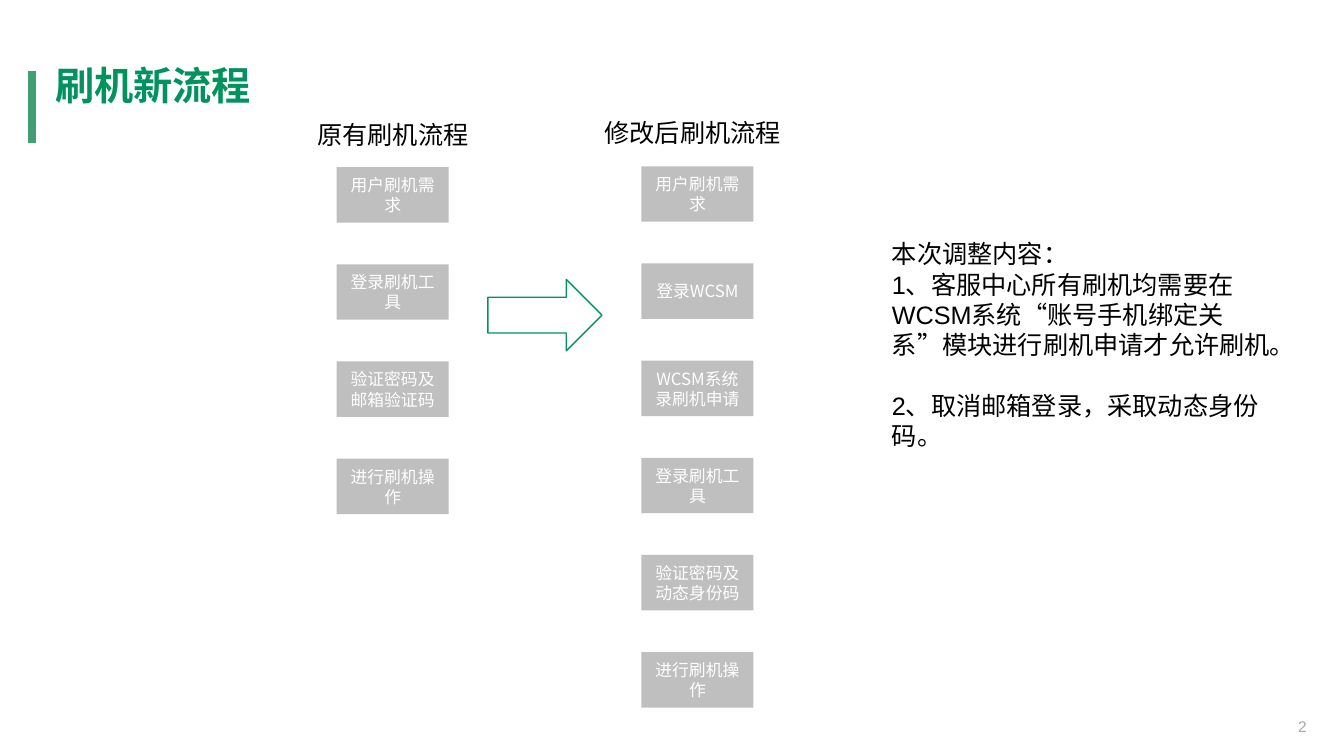
import pptx
import pptx.util
import pptx.dml.color
import pptx.enum.shapes
import pptx.enum.text
import pptx.oxml
import pptx.oxml.ns
from dataclasses import dataclass

Pt = pptx.util.Pt
Align = pptx.enum.text.PP_ALIGN
Anchor = pptx.enum.text.MSO_ANCHOR

TITLE = "刷机新流程"
PAGE_NUMBER = "2"
# Heading, heading box (left, top, width, height), first step (left, top), steps
FLOWS = [
    ("原有刷机流程", (219.6, 81.4, 124.6, 29), (240.5, 119.4),
     ["用户刷机需求", "登录刷机工具", "验证密码及邮箱验证码", "进行刷机操作"]),
    ("修改后刷机流程", (424.8, 80.6, 146.2, 29), (458.2, 118.8),
     ["用户刷机需求", "登录WCSM", "WCSM系统录刷机申请", "登录刷机工具",
      "验证密码及动态身份码", "进行刷机操作"]),
]
CHANGES = [
    "本次调整内容：",
    "1、客服中心所有刷机均需要在WCSM系统“账号手机绑定关系”模块进行刷机申请才允许刷机。",
    "2、取消邮箱登录，采取动态身份码。",
]

STEP_WIDTH, STEP_HEIGHT, STEP_PITCH = 80, 39.6, 69.4
CHANGE_GAP = 21.6


@dataclass(frozen=True)
class Theme:
    green: str = "00925F"
    bar: str = "409F73"
    step: str = "BFBFBF"
    black: str = "000000"
    white: str = "FFFFFF"
    grey: str = "A6A6A6"
    latin: str = "Arial"
    chinese: str = "Noto Sans CJK SC"
    title_size: int = 28
    body_size: int = 18
    step_size: int = 12
    number_size: int = 11


THEME = Theme()


def rgb(value):
    return pptx.dml.color.RGBColor.from_string(value)


def points(*values):
    return [Pt(value) for value in values]


def format_paragraph(paragraph, size, color, latin=THEME.latin, bold=False, align=Align.LEFT):
    paragraph.alignment = align
    font = paragraph.font
    font.size, font.bold, font.name = Pt(size), bold, latin
    font.color.rgb = rgb(color)
    properties = paragraph._p.pPr.find(pptx.oxml.ns.qn("a:defRPr"))
    east_asian = pptx.oxml.parse_xml(
        f'<a:ea {pptx.oxml.ns.nsdecls("a")} typeface="{THEME.chinese}"/>')
    properties.find(pptx.oxml.ns.qn("a:latin")).addnext(east_asian)


def add_text(slide, box, lines, size, color, align=Align.LEFT):
    frame = slide.shapes.add_textbox(*points(*box)).text_frame
    frame.word_wrap = True
    frame.text = "\n".join(lines)
    for paragraph in frame.paragraphs:
        format_paragraph(paragraph, size, color, align=align)
    return frame


def add_title(slide):
    title = slide.shapes.title
    title.left, title.top, title.width, title.height = points(32.4, 40.3, 156.2, 41)
    frame = title.text_frame
    frame.text = TITLE
    frame.word_wrap = False
    frame.auto_size = pptx.enum.text.MSO_AUTO_SIZE.NONE
    frame.vertical_anchor = Anchor.TOP
    format_paragraph(frame.paragraphs[0], THEME.title_size, THEME.green, bold=True)


def add_title_bar(slide):
    bar = slide.shapes.add_connector(
        pptx.enum.shapes.MSO_CONNECTOR.STRAIGHT, *points(23, 50.4, 23, 102.2))
    bar.line.color.rgb = rgb(THEME.bar)
    bar.line.width = Pt(6)
    bar._element.spPr.append(
        pptx.oxml.parse_xml(f'<a:effectLst {pptx.oxml.ns.nsdecls("a")}/>'))


def add_step(slide, left, top, text):
    step = slide.shapes.add_shape(
        pptx.enum.shapes.MSO_SHAPE.RECTANGLE, *points(left, top, STEP_WIDTH, STEP_HEIGHT))
    step.shadow.inherit = False
    step.fill.solid()
    step.fill.fore_color.rgb = rgb(THEME.step)
    step.line.fill.background()
    frame = step.text_frame
    frame.word_wrap = True
    frame.vertical_anchor = Anchor.MIDDLE
    frame.text = text
    format_paragraph(frame.paragraphs[0], THEME.step_size, THEME.white,
                     latin=THEME.chinese, align=Align.CENTER)


def add_arrow(slide):
    arrow = slide.shapes.add_shape(
        pptx.enum.shapes.MSO_SHAPE.RIGHT_ARROW, *points(348.5, 199.6, 81.5, 51))
    arrow.shadow.inherit = False
    arrow.fill.background()
    arrow.line.color.rgb = rgb(THEME.green)
    arrow.line.width = Pt(1)


def main():
    presentation = pptx.Presentation()
    presentation.slide_width, presentation.slide_height = points(960, 540)
    slide = presentation.slides.add_slide(presentation.slide_layouts[5])

    add_title(slide)
    add_title_bar(slide)
    for heading, heading_box, (left, top), steps in FLOWS:
        add_text(slide, heading_box, [heading], THEME.body_size, THEME.black)
        for index, step in enumerate(steps):
            add_step(slide, left, top + index * STEP_PITCH, step)
    add_arrow(slide)

    changes = add_text(slide, (630, 167, 285.1, 160), CHANGES, THEME.body_size, THEME.black)
    changes.paragraphs[-1].space_before = Pt(CHANGE_GAP)
    add_text(slide, (877, 509, 63.4, 21), [PAGE_NUMBER], THEME.number_size, THEME.grey,
             Align.RIGHT)

    presentation.save("out.pptx")


if __name__ == "__main__":
    main()
